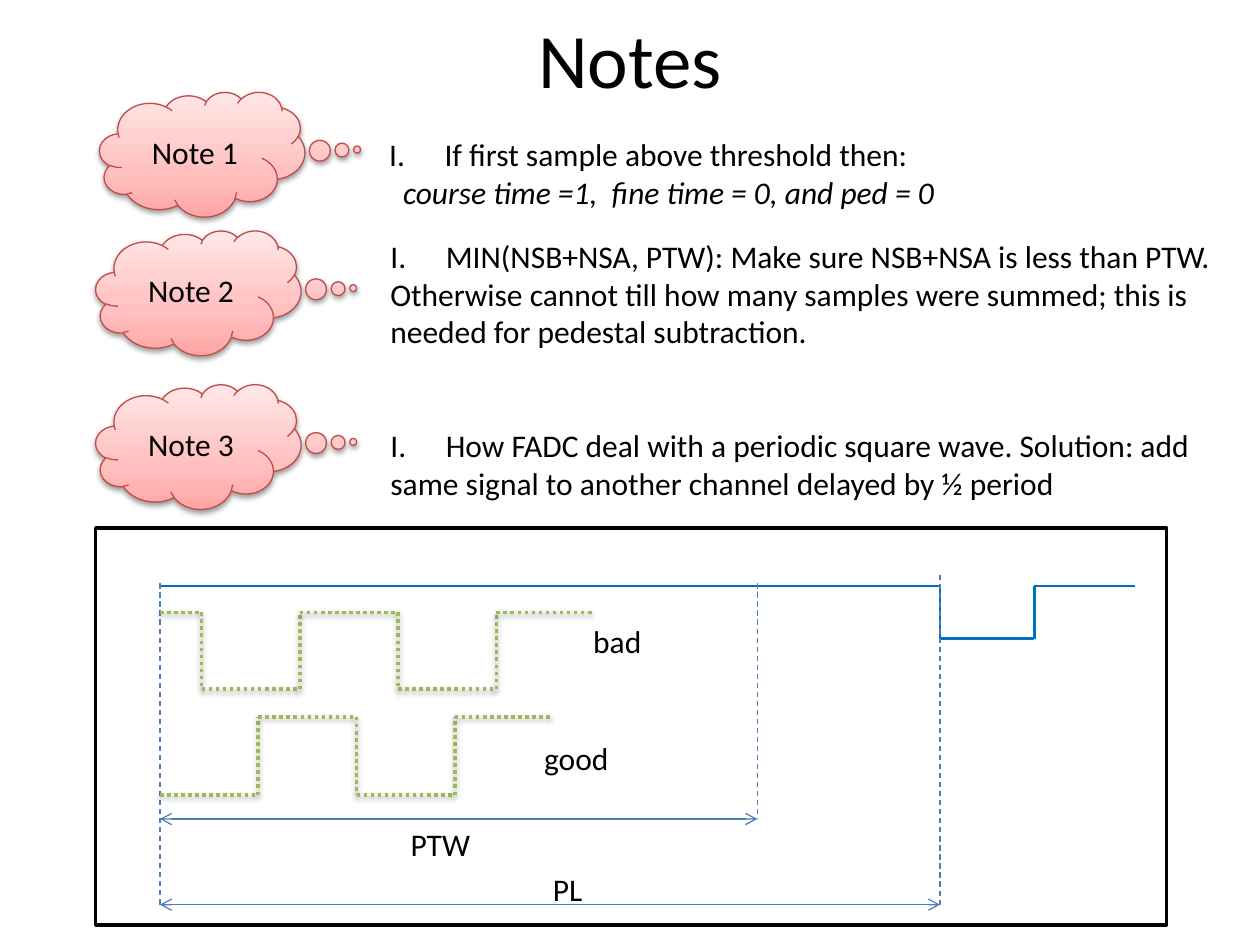
"""Builds the Notes slide: three note clouds and a signal timing diagram."""
from itertools import pairwise

from lxml import etree
from pptx import Presentation
from pptx.dml.color import RGBColor
from pptx.enum.dml import MSO_LINE
from pptx.enum.shapes import MSO_CONNECTOR, MSO_SHAPE
from pptx.enum.text import MSO_ANCHOR, PP_ALIGN
from pptx.oxml import parse_xml
from pptx.util import Inches, Pt

CLOUD, RECTANGLE = MSO_SHAPE.CLOUD_CALLOUT, MSO_SHAPE.RECTANGLE
STRAIGHT = MSO_CONNECTOR.STRAIGHT
DASH, DOTS = MSO_LINE.DASH, MSO_LINE.ROUND_DOT
MIDDLE, CENTER, LEFT = MSO_ANCHOR.MIDDLE, PP_ALIGN.CENTER, PP_ALIGN.LEFT
TOP = MSO_ANCHOR.TOP
NS = "http://schemas.openxmlformats.org/drawingml/2006/main"

COLORS = {"text": "000000", "cloud": "BF4C48", "trace": "0070C0",
          "guide": "4B7EBC", "wave": "9BBB59", "frame": "000000"}
CLOUD_STOPS = [(0, "FFA6A5"), (35, "FFC0BF"), (100, "FFE7E7")]
STYLES = {
    "frame": {"width": Pt(2)},
    "cloud": {"width": Pt(0.75)},
    "trace": {"width": Pt(1.5)},
    "guide": {"width": Pt(0.75), "dash_style": DASH},
    "span": {"width": Pt(0.75)},
    "wave": {"width": Pt(2), "dash_style": DOTS},
}

TITLE = ("Notes", (0.5, 0, 9, 0.92))
CLOUD_SIZE = (1.63, 0.99)
NOTES = [
    ("Note 1", (0.79, 0.73), (2.99, 1.02, 4.59, 0.71),
     ["If first sample above threshold then:"],
     "course time =1,  fine time = 0, and ped = 0"),
    ("Note 2", (0.76, 1.83), (3, 1.83, 6.77, 1.01),
     ["MIN(NSB+NSA, PTW): Make sure NSB+NSA is less than PTW.",
      "Otherwise cannot till how many samples were summed; this is",
      "needed for pedestal subtraction."], None),
    ("Note 3", (0.76, 3.05), (3, 3.33, 6.62, 0.71),
     ["How FADC deal with a periodic square wave. Solution: add",
      "same signal to another channel delayed by ½ period"], None),
]

FRAME = (0.76, 4.19, 8.5, 3.15)
START, PTW_END, PL_END = 1.27, 6.01, 7.46
HIGH, LOW, PTW_ROW, PL_ROW = 4.65, 5.07, 6.5, 7.18
PULSE_END, TRACE_END = 8.21, 9.01
HALF_PERIOD = 0.78
TRACE = [(START, HIGH), (PL_END, HIGH), (PL_END, LOW), (PULSE_END, LOW),
         (PULSE_END, HIGH), (TRACE_END, HIGH)]
GUIDES = [(START, 4.63, PL_ROW), (PTW_END, 4.63, PTW_ROW), (PL_END, 4.56, PL_ROW)]
SPANS = [(PTW_END, PTW_ROW), (PL_END, PL_ROW)]
WAVES = [(1.6, 4.86, 5.47, 4), (2.05, 6.31, 5.69, 3)]
LABELS = [("bad", (4.61, 4.89, 0.59, 0.4)), ("good", (4.22, 5.82, 0.72, 0.4)),
          ("PTW", (3.16, 6.5, 0.68, 0.36)), ("PL", (4.29, 6.86, 0.44, 0.36))]


def color(name):
    return RGBColor.from_string(COLORS[name])


def apply(target, values):
    for key, value in values.items():
        setattr(target, key, value)


def add_effects(shape, shadowed):
    shadow = ('<a:outerShdw blurRad="39370" dist="20320" dir="5400000" rotWithShape="0">'
              '<a:srgbClr val="000000"><a:alpha val="38000"/></a:srgbClr>'
              '</a:outerShdw>') if shadowed else ""
    shape.element.spPr.append(
        parse_xml(f'<a:effectLst xmlns:a="{NS}">{shadow}</a:effectLst>'))


def write(shape, lines, size=18, align=LEFT, anchor=TOP, wrap=False):
    apply(shape.text_frame, {"word_wrap": wrap, "vertical_anchor": anchor})
    shape.text_frame.text = "\n".join(lines)
    for paragraph in shape.text_frame.paragraphs:
        paragraph.alignment = align
        for run in paragraph.runs:
            apply(run.font, {"name": "Calibri", "size": Pt(size)})
            run.font.color.rgb = color("text")
    return shape.text_frame.paragraphs


def add_text(shapes, box, lines, **options):
    return write(shapes.add_textbox(*map(Inches, box)), lines, **options)


def indent(paragraph, margin, first=0):
    properties = paragraph._p.get_or_add_pPr()
    properties.set("marL", str(Inches(margin)))
    properties.set("indent", str(Inches(first)))
    return properties


def add_cloud(shapes, label, corner):
    cloud = shapes.add_shape(CLOUD, *map(Inches, corner + CLOUD_SIZE))
    cloud.adjustments[0], cloud.adjustments[1] = 0.754, -0.038
    stops = "".join(f'<a:gs pos="{share * 1000}"><a:srgbClr val="{tint}"/></a:gs>'
                    for share, tint in CLOUD_STOPS)
    cloud.element.spPr.append(parse_xml(
        f'<a:gradFill xmlns:a="{NS}" rotWithShape="1"><a:gsLst>{stops}</a:gsLst>'
        '<a:lin ang="16200000" scaled="0"/></a:gradFill>'))
    cloud.line.color.rgb = color("cloud")
    apply(cloud.line, STYLES["cloud"])
    add_effects(cloud, True)
    write(cloud, [label], align=CENTER, anchor=MIDDLE, wrap=True)


def add_note(shapes, label, corner, box, lines, formula):
    add_cloud(shapes, label, corner)
    paragraphs = add_text(shapes, box, lines + ([formula] if formula else []))
    numbering = indent(paragraphs[0], 0.44, -0.44)
    etree.SubElement(numbering, f"{{{NS}}}buFont", typeface="+mj-lt")
    etree.SubElement(numbering, f"{{{NS}}}buAutoNum", type="romanUcPeriod")
    if formula:
        indent(paragraphs[-1], 0.11)
        paragraphs[-1].runs[0].font.italic = True


def add_path(shapes, points, style, tint, shadowed=False, arrows=False):
    for start, end in pairwise(points):
        segment = shapes.add_connector(STRAIGHT, *map(Inches, start + end))
        segment.line.color.rgb = color(tint)
        apply(segment.line, STYLES[style])
        if arrows:
            outline = segment.line._get_or_add_ln()
            for tip in ("headEnd", "tailEnd"):
                etree.SubElement(outline, f"{{{NS}}}{tip}", type="arrow")
        add_effects(segment, shadowed)


def wave_points(first_edge, level, other, edges):
    points = [(START, level)]
    for step in range(edges):
        x = first_edge + step * HALF_PERIOD
        points += [(x, level), (x, other)]
        level, other = other, level
    return points + [(first_edge + edges * HALF_PERIOD, level)]


def add_diagram(shapes):
    frame = shapes.add_shape(RECTANGLE, *map(Inches, FRAME))
    frame.shadow.inherit = False
    frame.fill.background()
    frame.line.color.rgb = color("frame")
    apply(frame.line, STYLES["frame"])
    add_path(shapes, TRACE, "trace", "trace")
    for x, top, bottom in GUIDES:
        add_path(shapes, [(x, top), (x, bottom)], "guide", "guide")
    for end, row in SPANS:
        add_path(shapes, [(START, row), (end, row)], "span", "guide", arrows=True)
    for first_edge, level, other, edges in WAVES:
        if edges % 2:
            points = wave_points(first_edge, level, other, edges)
        else:
            points = wave_points(first_edge, level, other, edges)
        add_path(shapes, points, "wave", "wave", shadowed=True)
    for label, box in LABELS:
        add_text(shapes, box, [label])


def main():
    deck = Presentation()
    apply(deck, {"slide_width": Inches(10), "slide_height": Inches(7.5)})
    shapes = deck.slides.add_slide(deck.slide_layouts[6]).shapes
    title, box = TITLE
    add_text(shapes, box, [title], size=44, align=CENTER, anchor=MIDDLE, wrap=True)
    for note in NOTES:
        add_note(shapes, *note)
    add_diagram(shapes)
    deck.save("out.pptx")


if __name__ == "__main__":
    main()
